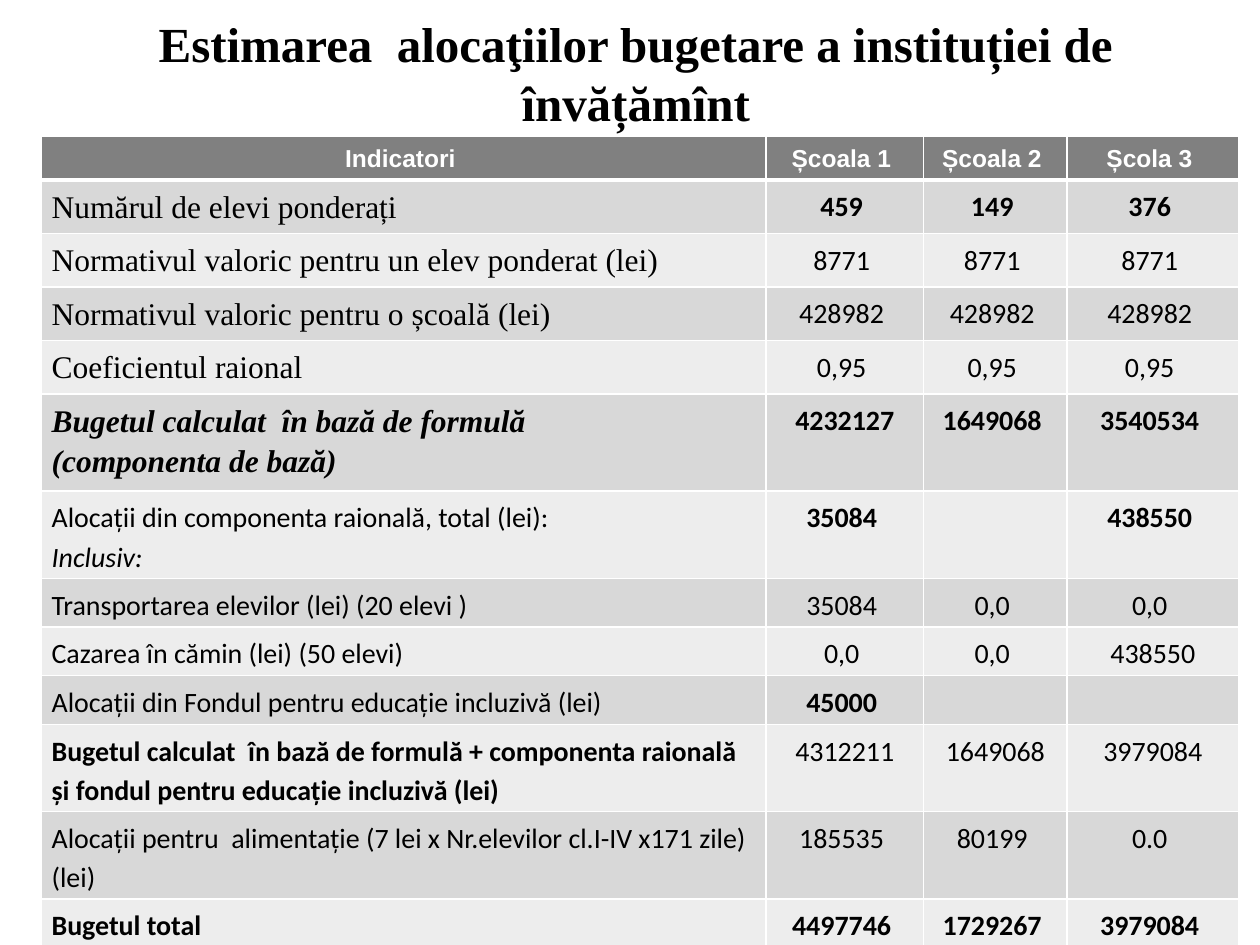
from lxml import etree
from pptx import Presentation, util as u
from pptx.dml.color import RGBColor
from pptx.enum import text
from pptx.oxml import ns

PX = 9144  # EMU per px, at 100 px to the inch
COLORS = {"ink": "000000", "white": "FFFFFF", "header": "808080",
          "dark": "D8D8D8", "light": "EDEDED"}
SERIF, SANS, HEAD = "Times New Roman", "Calibri", "Arial"

COLUMNS = [575, 125, 114, 136]
HEADINGS = ["Indicatori ", "Școala 1 ", "Școala 2 ", "Școla 3 "]
# height, label font, label style, value style, label, values
ROWS = [
    (41, SERIF, "", "b", "Numărul de elevi ponderați", ["459 ", "149 ", "376 "]),
    (41, SERIF, "", "", "Normativul valoric pentru un elev ponderat (lei)", ["8771 "] * 3),
    (41, SERIF, "", "", "Normativul valoric pentru o școală (lei)", ["428982 "] * 3),
    (41, SERIF, "", "", "Coeficientul raional", ["0,95 "] * 3),
    (74, SERIF, "bi", "b", "Bugetul calculat  în bază de formulă\n(componenta de bază)",
     ["4232127", "1649068 ", "3540534 "]),
    (66, SANS, "", "b", "Alocații din componenta raională, total (lei):\nInclusiv:",
     ["35084 ", "", "438550 "]),
    (37, SANS, "", "", "Transportarea elevilor (lei) (20 elevi )", ["35084 ", "0,0 ", "0,0 "]),
    (37, SANS, "", "", "Cazarea în cămin (lei) (50 elevi)", ["0,0 ", "0,0 ", "438550"]),
    (38, SANS, "", "b", "Alocații din Fondul pentru educație incluzivă (lei)",
     ["45000 ", "", ""]),
    (66, SANS, "b", "", "Bugetul calculat  în bază de formulă + componenta raională "
     "și fondul pentru educație incluzivă (lei)", ["4312211", "1649068", "3979084"]),
    (66, SANS, "", "", "Alocații pentru  alimentație (7 lei x Nr.elevilor cl.I-IV x171 zile) (lei)",
     ["185535 ", "80199 ", "0.0 "]),
    (37, SANS, "b", "b", "Bugetul total", ["4497746 ", "1729267 ", "3979084 "]),
]


class Painter:
    def __init__(self, page):
        self.page = page

    def fill_text(self, frame, words, font, size, color="ink", style="", align="CENTER",
                  spacing=None):
        frame.text = words
        for para in frame.paragraphs:
            para.alignment = getattr(text.PP_ALIGN, align)
            if spacing and words:
                para.line_spacing = spacing
            for span in para.runs:
                span.font.name = font
                span.font.size = u.Pt(size)
                span.font.bold = "b" in style
                span.font.italic = "i" in style
                span.font.color.rgb = RGBColor.from_string(COLORS[color])

    def title(self, left, top, width, height, words):
        box = self.page.shapes.add_textbox(*(n * PX for n in (left, top, width, height)))
        box.text_frame.word_wrap = True
        box.text_frame.vertical_anchor = text.MSO_ANCHOR.BOTTOM
        self.fill_text(box.text_frame, words, SERIF, 28, style="b")

    def table(self, left, top, columns, heights):
        frame = self.page.shapes.add_table(len(heights), len(columns), left * PX, top * PX,
                                           sum(columns) * PX, sum(heights) * PX)
        grid = frame.table
        for column, width in zip(grid.columns, columns):
            column.width = width * PX
        for row, height in zip(grid.rows, heights):
            row.height = height * PX
        return grid

    def cell(self, cell, fill, words, top=1, bottom=1, **look):
        cell.margin_left = cell.margin_right = 8 * PX
        cell.margin_top = cell.margin_bottom = 4 * PX
        cell.fill.solid()
        cell.fill.fore_color.rgb = RGBColor.from_string(COLORS[fill])
        self.fill_text(cell.text_frame, words, spacing=1.15, **look)
        self.borders(cell, L=1, R=1, T=top, B=bottom)

    def borders(self, cell, **widths):
        """Draw white borders, one width in points for each side."""
        props = cell._tc.get_or_add_tcPr()
        for place, (side, width) in enumerate(widths.items()):
            line = etree.Element(ns.qn(f"a:ln{side}"), w=str(u.Pt(width)))
            paint = etree.SubElement(line, ns.qn("a:solidFill"))
            etree.SubElement(paint, ns.qn("a:srgbClr"), val=COLORS["white"])
            props.insert(place, line)


def main():
    deck = Presentation()
    deck.slide_width, deck.slide_height = 1000 * PX, 750 * PX
    painter = Painter(deck.slides.add_slide(deck.slide_layouts[6]))
    painter.title(42, 17, 925, 92, "Estimarea  alocaţiilor bugetare a instituției de învățămînt")
    grid = painter.table(33, 108, COLUMNS, [33] + [row[0] for row in ROWS])

    for column, heading in enumerate(HEADINGS):
        painter.cell(grid.cell(0, column), "header", heading, bottom=3,
                     font=HEAD, size=14, color="white", style="b")

    for index, (_, font, label_style, value_style, label, values) in enumerate(ROWS, 1):
        fill = "dark" if index % 2 else "light"
        top = 3 if index == 1 else 1
        painter.cell(grid.cell(index, 0), fill, label, top, font=font,
                     size=18 if font == SERIF else 16, style=label_style, align="LEFT")
        for column, value in enumerate(values, 1):
            painter.cell(grid.cell(index, column), fill, value, top,
                         font=SANS, size=16, style=value_style)
        for para in grid.cell(index, 0).text_frame.paragraphs:
            if para.text == "Inclusiv:":
                para.runs[0].font.italic = True

    deck.save("out.pptx")


if __name__ == "__main__":
    main()
